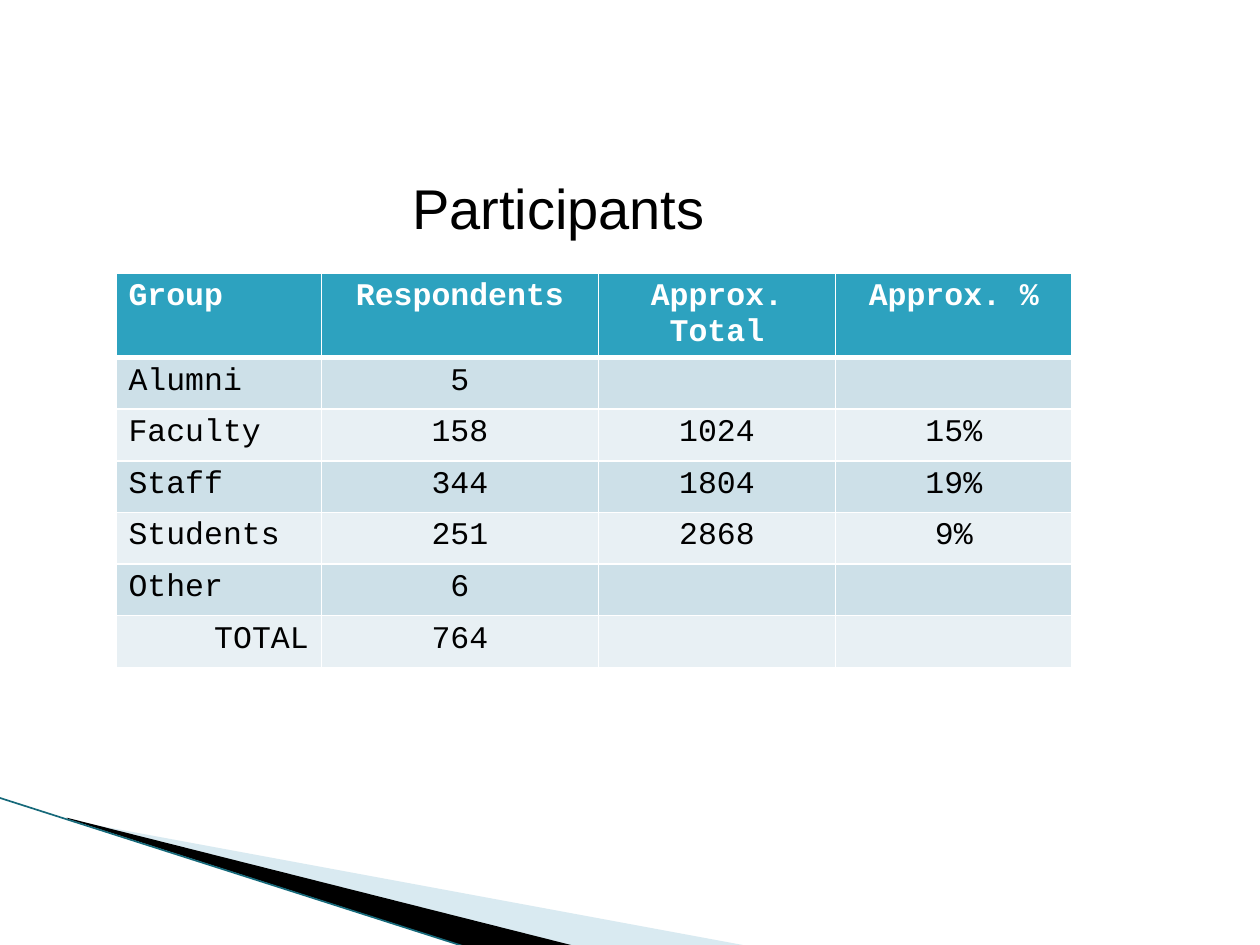
from lxml.etree import SubElement
from pptx import Presentation
from pptx.dml.color import RGBColor
from pptx.enum.shapes import MSO_CONNECTOR
from pptx.enum.text import MSO_ANCHOR, PP_ALIGN
from pptx.oxml.ns import qn
from pptx.util import Inches, Pt

COLORS = {
    "text": "000000",
    "white": "FFFFFF",
    "header": "2DA2BF",
    "band_dark": "CDE0E8",
    "band_light": "E8F0F4",
    "pale_wedge": "A0CBDC",
    "black_wedge": "000000",
    "edge": "16697A",
}
COLUMN_WIDTHS = [1.63, 2.2, 1.88, 1.88]
ROW_HEIGHT = 0.41
ROWS = [
    ["Group", "Respondents", "Approx. Total", "Approx. %"],
    ["Alumni", "5", "", ""],
    ["Faculty", "158", "1024", "15%"],
    ["Staff", "344", "1804", "19%"],
    ["Students", "251", "2868", "9%"],
    ["Other", "6", "", ""],
    ["TOTAL", "764", "", ""],
]


def rgb(name):
    return RGBColor.from_string(COLORS[name])


def add_wedge(s, points, color, opacity=None):
    corners = [(Inches(x), Inches(y)) for x, y in points]
    builder = s.shapes.build_freeform(*corners[0])
    builder.add_line_segments(corners[1:], close=True)
    sp = builder.convert_to_shape()
    sp.shadow.inherit = False
    sp.fill.solid()
    sp.fill.fore_color.rgb = rgb(color)
    sp.line.fill.background()
    if opacity is not None:
        clr = sp.fill._xPr.find(qn("a:solidFill"))[0]
        SubElement(clr, qn("a:alpha"), val=str(opacity * 1000))


def add_edge(s, start, end, color, width):
    line = s.shapes.add_connector(
        MSO_CONNECTOR.STRAIGHT, *[Inches(v) for v in start + end])
    line.line.color.rgb = rgb(color)
    line.line.width = Pt(width)
    SubElement(line._element.spPr, qn("a:effectLst"))


def set_title(s, text):
    sp = s.shapes.title
    sp.left, sp.top = Inches(3.17), Inches(1.33)
    sp.width, sp.height = Inches(5.58), Inches(0.64)
    tf = sp.text_frame
    tf.text = text
    tf.word_wrap = True
    tf.vertical_anchor = MSO_ANCHOR.TOP
    p = tf.paragraphs[0]
    p.alignment = PP_ALIGN.LEFT
    p.font.name = "Arial"
    p.font.size = Pt(32)
    p.font.color.rgb = rgb("text")


def set_borders(cell, top, bottom):
    tcPr = cell._tc.get_or_add_tcPr()
    for side, width in (("L", 1), ("R", 1), ("T", top), ("B", bottom)):
        ln = SubElement(tcPr, qn(f"a:ln{side}"), w=str(Pt(width)))
        fill = SubElement(ln, qn("a:solidFill"))
        SubElement(fill, qn("a:srgbClr"), val=COLORS["white"])


def format_cell(cell, text, row, col):
    is_header = row == 0
    # A thicker rule separates the header from the body
    set_borders(cell, top=3 if row == 1 else 1, bottom=3 if is_header else 1)
    band = "band_dark" if row % 2 else "band_light"
    cell.fill.solid()
    cell.fill.fore_color.rgb = rgb("header" if is_header else band)
    cell.text = text
    p = cell.text_frame.paragraphs[0]
    if col > 0:
        p.alignment = PP_ALIGN.CENTER
    elif text == "TOTAL":
        p.alignment = PP_ALIGN.RIGHT
    else:
        p.alignment = PP_ALIGN.LEFT
    p.font.name = "Courier New"
    p.font.size = Pt(18)
    p.font.bold = is_header
    p.font.color.rgb = rgb("white" if is_header else "text")


def add_participants_table(s):
    table = s.shapes.add_table(
        len(ROWS), len(COLUMN_WIDTHS), Inches(0.92), Inches(2.17),
        Inches(sum(COLUMN_WIDTHS)), Inches(ROW_HEIGHT * len(ROWS))).table
    for column, width in zip(table.columns, COLUMN_WIDTHS):
        column.width = Inches(width)
    for r, values in enumerate(ROWS):
        table.rows[r].height = Inches(ROW_HEIGHT)
        for c, text in enumerate(values):
            format_cell(table.cell(r, c), text, r, c)


def main():
    prs = Presentation()
    prs.slide_width, prs.slide_height = Inches(10), Inches(7.5)
    s = prs.slides.add_slide(prs.slide_layouts[5])

    # Corner decoration
    add_wedge(s, [(0.55, 6.51), (5.95, 7.51), (4.56, 7.51), (0.55, 6.5)],
              "pale_wedge", opacity=40)
    add_wedge(s, [(0.53, 6.49), (4.57, 7.51), (3.72, 7.52), (0.54, 6.5)],
              "black_wedge")
    add_edge(s, (-0.01, 6.33), (3.71, 7.52), "edge", 0.95)

    # Title and table
    set_title(s, "Participants")
    add_participants_table(s)
    prs.save("out.pptx")


if __name__ == "__main__":
    main()
